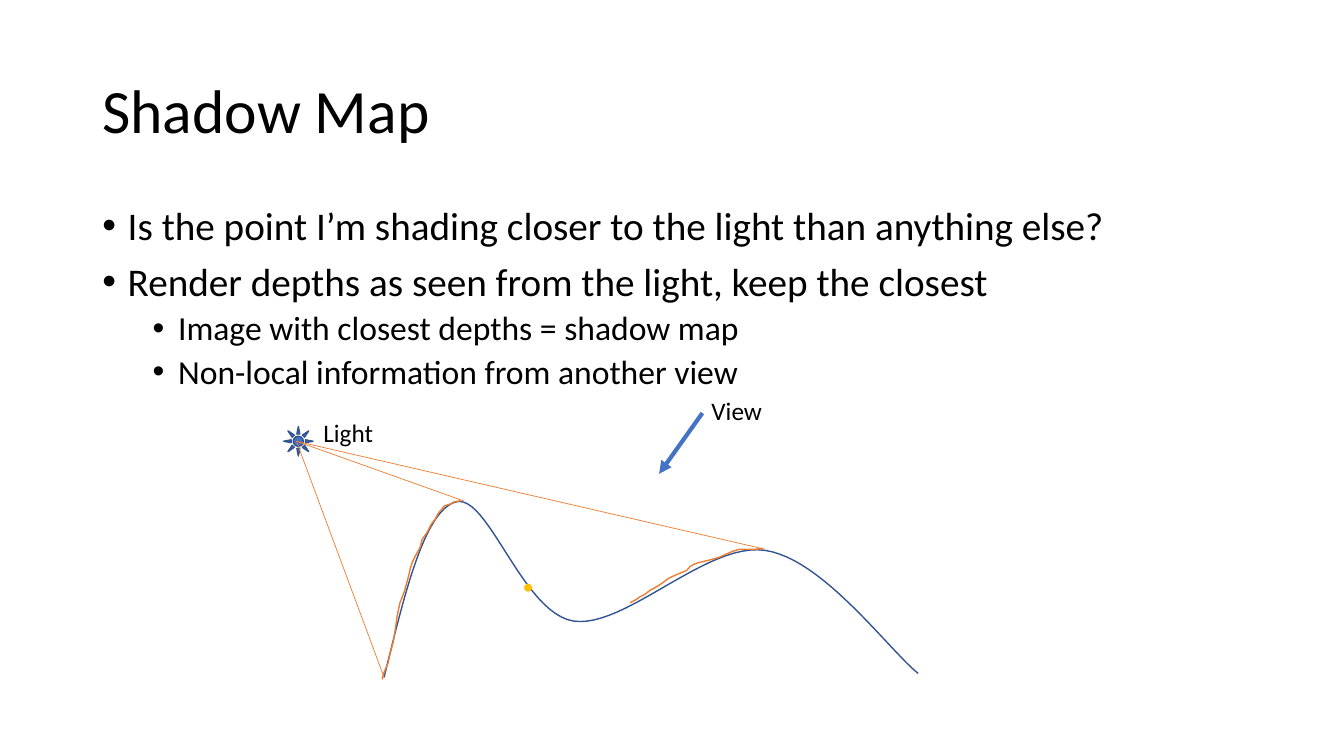
from lxml import etree
from pptx import Presentation
from pptx.dml.color import RGBColor
from pptx.enum.shapes import MSO_CONNECTOR, MSO_SHAPE
from pptx.enum.text import MSO_ANCHOR, MSO_AUTO_SIZE
from pptx.oxml.ns import qn
from pptx.util import Cm, Pt

STRAIGHT = MSO_CONNECTOR.STRAIGHT
SUN, OVAL = MSO_SHAPE.SUN, MSO_SHAPE.OVAL
TOP, MIDDLE = MSO_ANCHOR.TOP, MSO_ANCHOR.MIDDLE
FIT_SHAPE = MSO_AUTO_SIZE.SHAPE_TO_FIT_TEXT

FONT = "Calibri"
BLACK, BLUE, DARK_BLUE = "000000", "4472C4", "325491"
ORANGE, GOLD = "ED7D31", "FFC000"

TITLE = "Shadow Map"
BULLETS = [
    (0, "Is the point I’m shading closer to the light than anything else?"),
    (0, "Render depths as seen from the light, keep the closest"),
    (1, "Image with closest depths = shadow map"),
    (1, "Non-local information from another view"),
]
LEVELS = {0: (28, 10, 0.64), 1: (24, 5, 1.91)}
HANGING = 0.64

LABELS = [("View", (17.68, 9.83, 1.8, 1.02)), ("Light", (7.9, 10.39, 1.78, 1.02))]
VIEW_ARROW = ((17.7, 10.41), (16.61, 11.94))

LIGHT = (7.47, 11.12)
LIGHT_SIZE = 0.74
RAY_ENDS = [(9.68, 17.07), (11.68, 12.62), (19.28, 13.84)]
SHADED_POINT = (13.31, 14.81)
POINT_SIZE = 0.2

TERRAIN_START = (9.68, 17.07)
TERRAIN_CURVES = [
    ((10.19, 14.99), (10.69, 12.88), (11.48, 12.65)),
    ((12.29, 12.4), (13.16, 15.44), (14.45, 15.65)),
    ((15.75, 15.85), (17.83, 13.64), (19.28, 13.87)),
    ((20.73, 14.07), (22.43, 16.41), (23.14, 16.97)),
]
CURVE_STEPS = 24

LIT_SLOPES = [
    [(9.63, 17.12), (9.68, 16.94), (9.78, 16.71), (9.83, 16.48), (9.91, 16.18),
     (9.96, 15.88), (10.01, 15.52), (10.08, 15.19), (10.19, 14.91), (10.24, 14.73),
     (10.29, 14.55), (10.34, 14.33), (10.39, 14.17), (10.49, 13.97), (10.59, 13.79),
     (10.64, 13.59), (10.77, 13.41), (10.87, 13.21), (10.97, 13.08), (11.05, 12.93),
     (11.2, 12.75), (11.35, 12.7), (11.46, 12.64), (11.61, 12.62)],
    [(19.23, 13.82), (19.05, 13.84), (18.64, 13.84), (18.47, 13.89), (18.29, 13.97),
     (18.11, 14.05), (17.93, 14.1), (17.73, 14.15), (17.53, 14.2), (17.4, 14.27),
     (17.3, 14.38), (17.17, 14.43), (16.94, 14.53), (16.84, 14.58), (16.71, 14.68),
     (16.59, 14.76), (16.38, 14.88), (16.23, 14.99), (16.13, 15.04), (16.03, 15.11),
     (15.88, 15.19)],
]


def color(hex_string):
    return RGBColor.from_string(hex_string)


def lengths(values):
    return [Cm(value) for value in values]


def set_line(item, line_color, width):
    item.line.color.rgb = color(line_color)
    item.line.width = Pt(width)


def add_text(box, texts, anchor=TOP, wrap=True):
    frame = slide.shapes.add_textbox(*lengths(box)).text_frame
    frame.word_wrap = wrap
    frame.vertical_anchor = anchor
    frame.text = "\n".join(texts)
    return frame


def style_text(paragraph, size):
    font = paragraph.runs[0].font
    font.name, font.size = FONT, Pt(size)
    font.color.rgb = color(BLACK)


def add_bullet(paragraph, indent):
    properties = paragraph._p.get_or_add_pPr()
    properties.set("marL", str(Cm(indent)))
    properties.set("indent", str(-Cm(HANGING)))
    etree.SubElement(properties, qn("a:buFont")).set("typeface", "Arial")
    etree.SubElement(properties, qn("a:buChar")).set("char", "•")


def add_line(start, end, line_color, width):
    line = slide.shapes.add_connector(STRAIGHT, *lengths(start + end))
    set_line(line, line_color, width)
    etree.SubElement(line._element.spPr, qn("a:effectLst"))
    return line


def add_path(points, line_color):
    start, *rest = [lengths(point) for point in points]
    builder = slide.shapes.build_freeform(*start)
    builder.add_line_segments(rest, close=False)
    path = builder.convert_to_shape()
    path.shadow.inherit = False
    path.fill.background()
    set_line(path, line_color, 1)


def add_marker(kind, center, size, fill_color):
    corner = [value - size / 2 for value in center]
    marker = slide.shapes.add_shape(kind, *lengths(corner + [size, size]))
    marker.shadow.inherit = False
    marker.fill.solid()
    marker.fill.fore_color.rgb = color(fill_color)
    marker.line.fill.background()
    return marker


def curve_points(start, curves):
    points = [start]
    for curve in curves:
        anchors = (points[-1], *curve)
        for step in range(1, CURVE_STEPS + 1):
            t = step / CURVE_STEPS
            weights = ((1 - t) ** 3, 3 * t * (1 - t) ** 2, 3 * t * t * (1 - t), t ** 3)
            points.append(tuple(
                sum(w * anchor[axis] for w, anchor in zip(weights, anchors))
                for axis in (0, 1)))
    return points


presentation = Presentation()
presentation.slide_width, presentation.slide_height = Cm(33.87), Cm(19.05)
slide = presentation.slides.add_slide(presentation.slide_layouts[6])

heading = add_text((2.33, 1.01, 29.21, 3.68), [TITLE], MIDDLE).paragraphs[0]
heading.line_spacing = 0.9
style_text(heading, 44)

body = add_text((2.33, 5.07, 29.21, 12.09), [text for _, text in BULLETS])
for paragraph, (level, _) in zip(body.paragraphs, BULLETS):
    size, space_before, indent = LEVELS[level]
    paragraph.level = level
    paragraph.line_spacing = 0.9
    paragraph.space_before = Pt(space_before)
    add_bullet(paragraph, indent)
    style_text(paragraph, size)

add_path(curve_points(TERRAIN_START, TERRAIN_CURVES), DARK_BLUE)
sun = add_marker(SUN, (7.52, 11.12), LIGHT_SIZE, BLUE)
sun.adjustments[0] = 0.327
set_line(sun, DARK_BLUE, 1)
for ray_end in RAY_ENDS:
    add_line(LIGHT, ray_end, ORANGE, 0.5)
for slope in LIT_SLOPES:
    add_path(slope, ORANGE)
add_marker(OVAL, SHADED_POINT, POINT_SIZE, GOLD)

view_arrow = add_line(*VIEW_ARROW, BLUE, 3)
etree.SubElement(view_arrow.line._get_or_add_ln(), qn("a:tailEnd")).set("type", "triangle")
for label, box in LABELS:
    caption = add_text(box, [label], wrap=False)
    caption.auto_size = FIT_SHAPE
    style_text(caption.paragraphs[0], 18)

presentation.save("out.pptx")
